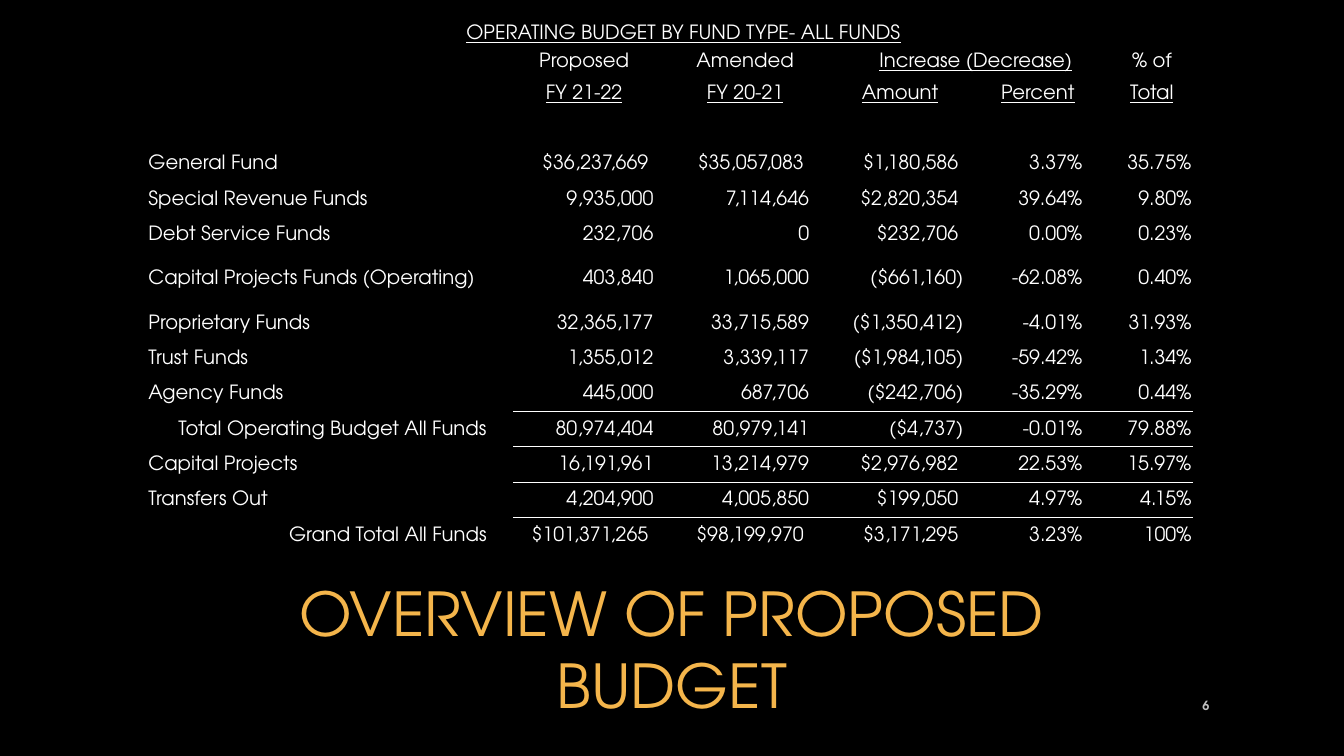
from lxml.etree import SubElement
from pptx import Presentation
from pptx.dml.color import RGBColor
from pptx.enum.text import MSO_ANCHOR as Anchor, MSO_AUTO_SIZE as AutoSize, PP_ALIGN as Align
from pptx.oxml import parse_xml
from pptx.oxml.ns import nsdecls, qn
from pptx.util import Cm, Pt

COLORS = {"black": "000000", "white": "FFFFFF", "gold": "F4B54B", "gray": "BFBFBF"}
PLAIN_STYLE = "{2D5ABB26-0587-4C30-8999-92F81FD0307C}"
WIDTHS = [8.59, 0.64, 3.56, 0.64, 3.28, 0.64, 3.25, 0.69, 2.31, 0.69, 2.06, 0.69]
HEIGHTS = [0.71] * 2 + [0.89] * 5 + [1.35] + [0.89] * 7
FIRST_FUND_ROW = 4
RULED_ROWS = [10, 11, 13]
RULED_COLUMNS = range(2, 11)
HEADINGS = [
    (0, 0, 11, "OPERATING BUDGET BY FUND TYPE- ALL FUNDS", True),
    (1, 2, 2, "Proposed", False),
    (1, 4, 4, "Amended", False),
    (1, 6, 8, "Increase (Decrease)", True),
    (1, 10, 10, "% of", False),
    (2, 2, 2, "FY 21-22", True),
    (2, 4, 4, "FY 20-21", True),
    (2, 6, 6, "Amount", True),
    (2, 8, 8, "Percent", True),
    (2, 10, 10, "Total", True),
]
FUNDS = [
    ("General Fund", "$36,237,669", "$35,057,083", "$1,180,586", "3.37%", "35.75%"),
    ("Special Revenue Funds", "9,935,000", "7,114,646", "$2,820,354", "39.64%", "9.80%"),
    ("Debt Service Funds", "232,706", "0", "$232,706", "0.00%", "0.23%"),
    ("Capital Projects Funds (Operating)", "403,840", "1,065,000", "($661,160)", "-62.08%", "0.40%"),
    ("Proprietary Funds", "32,365,177", "33,715,589", "($1,350,412)", "-4.01%", "31.93%"),
    ("Trust Funds", "1,355,012", "3,339,117", "($1,984,105)", "-59.42%", "1.34%"),
    ("Agency Funds", "445,000", "687,706", "($242,706)", "-35.29%", "0.44%"),
    ("Total Operating Budget All Funds", "80,974,404", "80,979,141", "($4,737)", "-0.01%", "79.88%"),
    ("Capital Projects", "16,191,961", "13,214,979", "$2,976,982", "22.53%", "15.97%"),
    ("Transfers Out", "4,204,900", "4,005,850", "$199,050", "4.97%", "4.15%"),
    ("Grand Total All Funds", "$101,371,265", "$98,199,970", "$3,171,295", "3.23%", "100%"),
]


class BudgetPage:
    """Holds the text style and the current slide."""

    def __init__(self, deck):
        """Add a black page with a title."""
        self.font_name = "TeX Gyre Adventor"
        self.page = deck.slides.add_slide(deck.slide_layouts[5])
        self.page.background.fill.solid()
        self.page.background.fill.fore_color.rgb = RGBColor.from_string(COLORS["black"])

    def apply(self, target, values):
        """Set every attribute in a dict of format values."""
        for name, value in values.items():
            setattr(target, name, value)

    def put_text(self, frame, text, color, size, align, **font_values):
        """Put one formatted paragraph into a text frame."""
        para = frame.paragraphs[0]
        para.alignment = align
        span = para.add_run()
        span.text = text
        self.apply(span.font, {"name": self.font_name, "size": Pt(size), **font_values})
        span.font.color.rgb = RGBColor.from_string(COLORS[color])
        return para

    def title(self, text, place):
        """Fill and place the title."""
        box = self.page.shapes.title
        self.apply(box, place)
        self.apply(box.text_frame, {"word_wrap": True, "auto_size": AutoSize.NONE,
                                    "vertical_anchor": Anchor.BOTTOM})
        self.put_text(box.text_frame, text, "gold", 43.2, Align.CENTER)

    def page_number(self, text, place):
        """Add the page number."""
        box = self.page.shapes.add_textbox(**place)
        self.apply(box.text_frame, {"word_wrap": True, "vertical_anchor": Anchor.MIDDLE})
        para = self.put_text(box.text_frame, text, "gray", 9, Align.RIGHT, bold=True)
        para.space_after = Pt(6)

    def grid(self, left, top):
        """Add an empty, unfilled table."""
        frame = self.page.shapes.add_table(len(HEIGHTS), len(WIDTHS), Cm(left), Cm(top),
                                           Cm(sum(WIDTHS)), Cm(sum(HEIGHTS)))
        for style in frame.element.iter(qn("a:tableStyleId")):
            style.text = PLAIN_STYLE
        table = frame.table
        self.apply(table, {"first_row": False, "horz_banding": False})
        for column, width in zip(table.columns, WIDTHS):
            column.width = Cm(width)
        for row, height in zip(table.rows, HEIGHTS):
            row.height = Cm(height)
        for cell in table.iter_cells():
            cell.fill.background()
            self.apply(cell, {"margin_left": Cm(0.03), "margin_right": Cm(0.03), "margin_top": Cm(0.03),
                              "margin_bottom": 0, "vertical_anchor": Anchor.MIDDLE})
            SubElement(cell.text_frame.paragraphs[0]._p, qn("a:endParaRPr"), sz="1400")
        return table

    def headings(self, table):
        """Fill in the caption and the column headings."""
        for row, first, last, text, underline in HEADINGS:
            cell = table.cell(row, first)
            if last > first:
                cell.merge(table.cell(row, last))
            if text.startswith("Increase"):
                cell.margin_left = Cm(0.85)
            self.put_text(cell.text_frame, text, "white", 14, Align.CENTER, underline=underline)

    def funds(self, table):
        """Fill in the fund rows, with dollar amounts set in a little."""
        for row, values in enumerate(FUNDS, FIRST_FUND_ROW):
            for index, text in enumerate(values):
                cell = table.cell(row, 2 * index)
                if text.startswith("$"):
                    cell.margin_right = Cm(0.16)
                is_label = index == 0 and "Total" not in text
                self.put_text(cell.text_frame, text, "white", 14, Align.LEFT if is_label else Align.RIGHT)

    def edge(self, cell, tag):
        """Draw a thin white edge on a cell."""
        line = parse_xml(f'<a:{tag} {nsdecls("a")} w="12700"><a:solidFill>'
                         f'<a:srgbClr val="{COLORS["white"]}"/></a:solidFill></a:{tag}>')
        properties = cell._tc.get_or_add_tcPr()
        properties.insert(len(properties) - 1, line)

    def rules(self, table):
        """Draw the rules around the totals."""
        for row in range(len(HEIGHTS)):
            for column in RULED_COLUMNS:
                if row - 1 in RULED_ROWS:
                    self.edge(table.cell(row, column), "lnT")
                if row in RULED_ROWS:
                    self.edge(table.cell(row, column), "lnB")


def main():
    """Build and save the deck."""
    deck = Presentation()
    deck.slide_width, deck.slide_height = Cm(33.87), Cm(19.05)
    budget = BudgetPage(deck)
    budget.title("OVERVIEW OF PROPOSED BUDGET",
                 {"left": Cm(4.88), "top": Cm(15.32), "width": Cm(24.1), "height": Cm(2.97)})
    budget.page_number("6", {"left": Cm(29.21), "top": Cm(17.27), "width": Cm(1.52), "height": Cm(1.02)})
    table = budget.grid(3.71, 0.48)
    budget.headings(table)
    budget.funds(table)
    budget.rules(table)
    deck.save("out.pptx")


if __name__ == "__main__":
    main()
